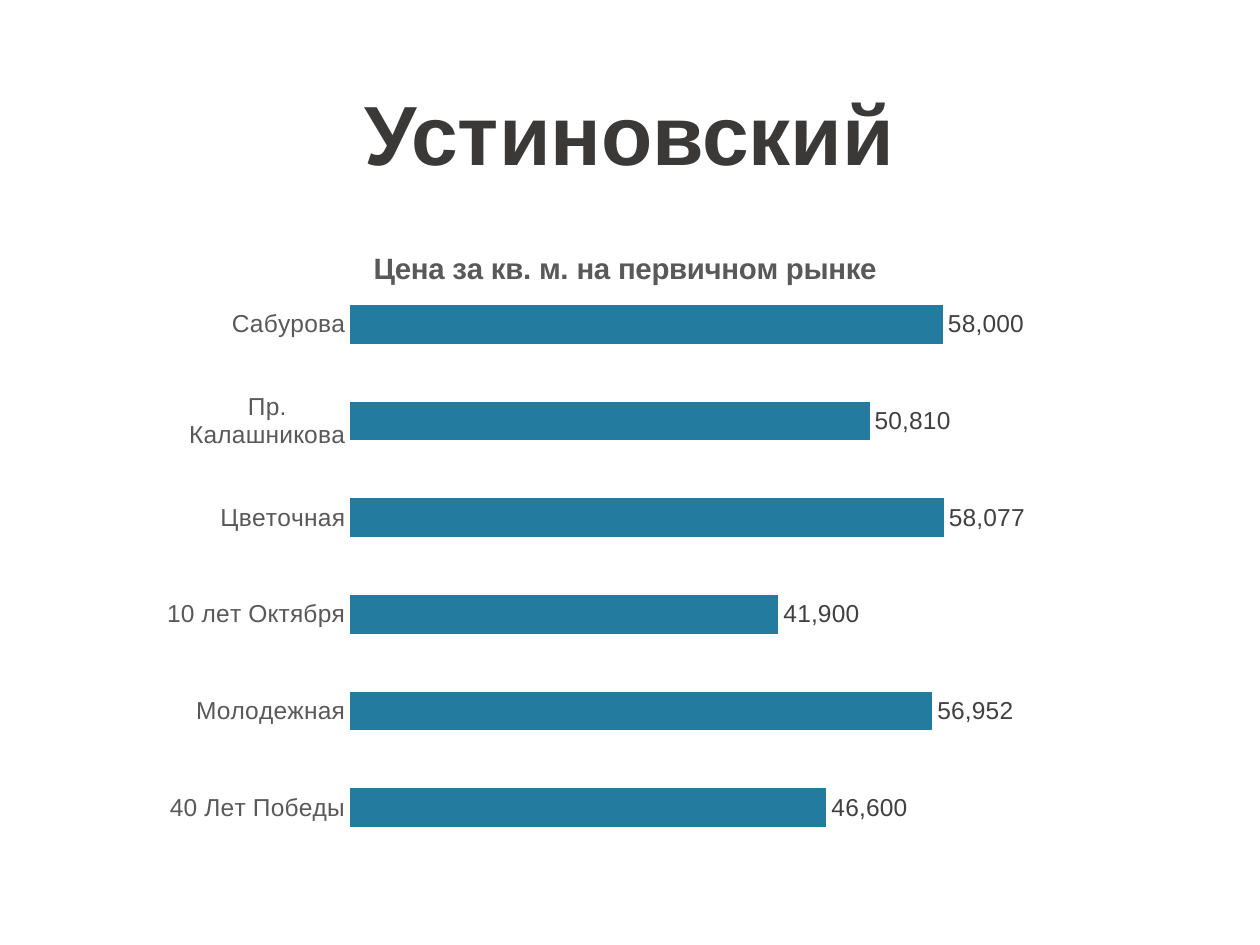
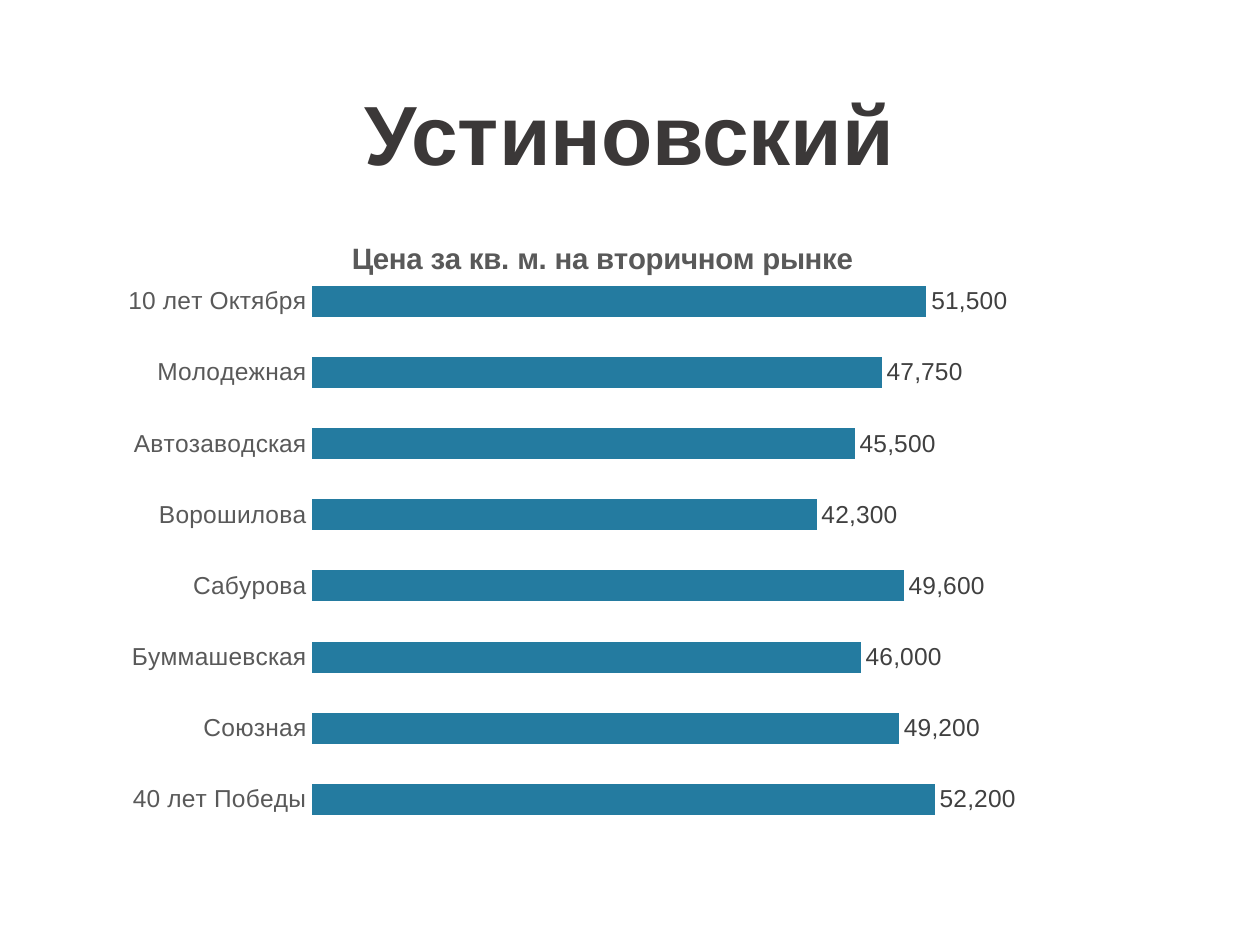
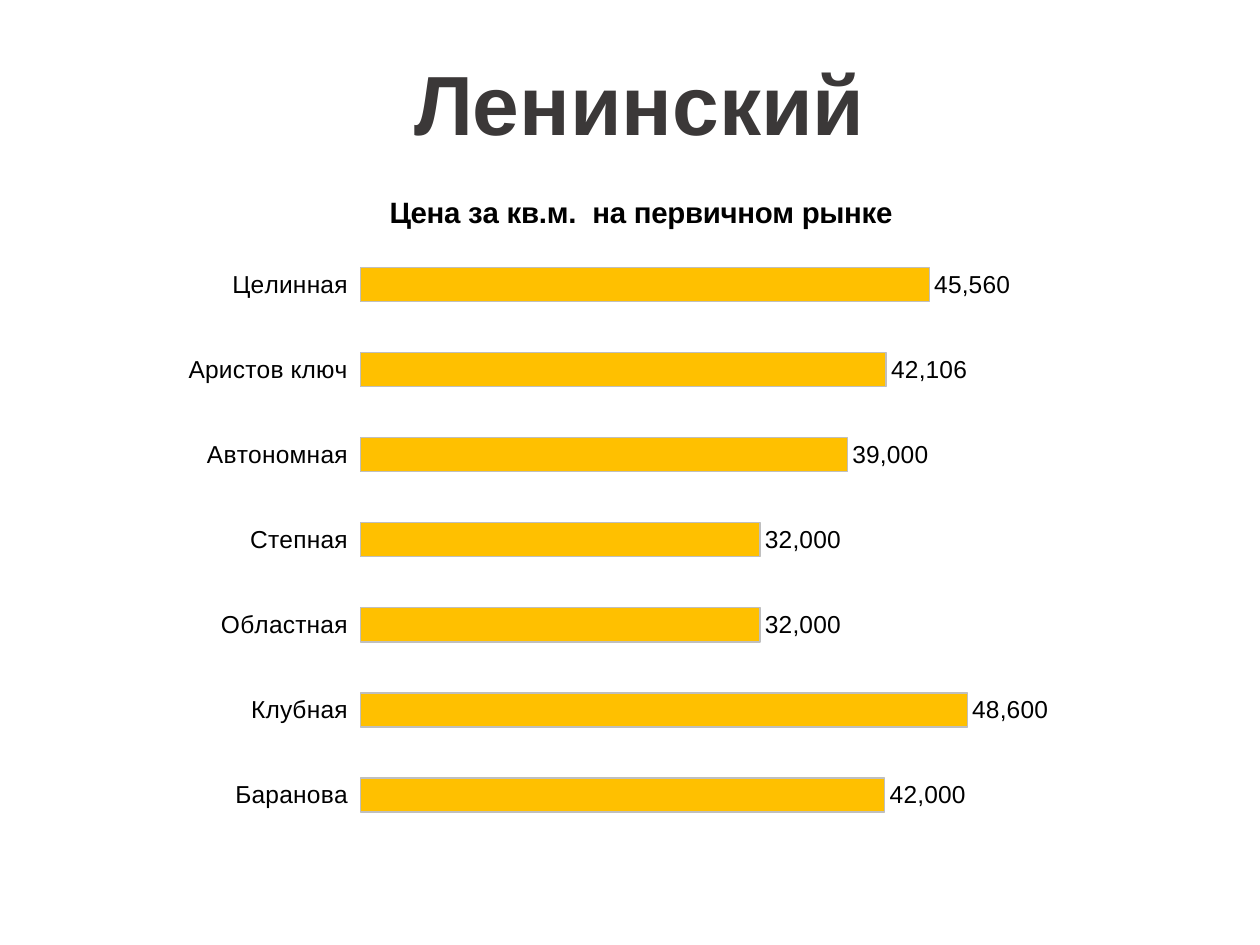
from lxml import etree
from pptx import Presentation
from pptx.chart.data import CategoryChartData
from pptx.dml.color import RGBColor
from pptx.enum import chart as kinds, text
from pptx.oxml import ns
from pptx.util import Inches, Pt

FONT = "Arial"
HEADING = RGBColor(0x3B, 0x38, 0x38)
BLACK = RGBColor(0, 0, 0)
GREY = RGBColor(0x59, 0x59, 0x59)
DARK_GREY = RGBColor(0x40, 0x40, 0x40)
SILVER = RGBColor(0xBF, 0xBF, 0xBF)
BLUE = RGBColor(0x24, 0x7B, 0xA0)
AMBER = RGBColor(0xFF, 0xC0, 0x00)


def set_font(font, size, color, bold=False):
    font.name = FONT
    font.size = Pt(size)
    font.bold = bold
    font.color.rgb = color


def set_layout(parent, index, **settings):
    for old in parent.findall(ns.qn("c:layout")):
        parent.remove(old)
    layout = etree.Element(ns.qn("c:layout"))
    manual = etree.SubElement(layout, ns.qn("c:manualLayout"))
    for name, value in settings.items():
        etree.SubElement(manual, ns.qn("c:" + name)).set("val", str(value))
    parent.insert(index, layout)


pages = [
    dict(
        district="Устиновский", heading_at=(0.98, 0.6),
        title="Цена за кв. м. на первичном рынке", title_at=(0.217, 0.015),
        series="Series 1", frame=(1.3, 1.86, 7.48, 5.33), plot=(0.198, 0.062, 0.759, 0.864),
        gap=150, overlap=0, maximum=70000, fill=BLUE, outline=None,
        text_color=GREY, label_color=DARK_GREY, tick=kinds.XL_TICK_MARK.NONE,
        prices={"40 Лет Победы": 46600, "Молодежная": 56952, "10 лет Октября": 41900,
                "Цветочная": 58077, "Пр. Калашникова": 50810, "Сабурова": 58000},
    ),
    dict(
        district="Устиновский", heading_at=(0.98, 0.6),
        title="Цена за кв. м. на вторичном рынке", title_at=(0.235, 0.015),
        series="Series 1", frame=(0.99, 1.78, 7.49, 5.23), plot=(0.198, 0.063, 0.759, 0.864),
        gap=130, overlap=73, maximum=60000, fill=BLUE, outline=None,
        text_color=GREY, label_color=DARK_GREY, tick=kinds.XL_TICK_MARK.NONE,
        prices={"40 лет Победы": 52200, "Союзная": 49200, "Буммашевская": 46000,
                "Сабурова": 49600, "Ворошилова": 42300, "Автозаводская": 45500,
                "Молодежная": 47750, "10 лет Октября": 51500},
    ),
    dict(
        district="Ленинский", heading_at=(1.06, 0.36),
        title="Цена за кв.м.  на первичном рынке", title_at=(0.268, 0.04),
        series="Цена за кв.м.  на первичном рынке",
        frame=(0.75, 1.27, 8.58, 5.71), plot=(0.246, 0.114, 0.693, 0.828),
        gap=150, overlap=0, maximum=60000, fill=AMBER, outline=SILVER,
        text_color=BLACK, label_color=BLACK, tick=kinds.XL_TICK_MARK.OUTSIDE,
        prices={"Баранова": 42000, "Клубная": 48600, "Областная": 32000, "Степная": 32000,
                "Автономная": 39000, "Аристов ключ": 42106, "Целинная": 45560},
    ),
]

deck = Presentation()
deck.slide_width = Inches(10)
deck.slide_height = Inches(7.5)

for page in pages:
    slide = deck.slides.add_slide(deck.slide_layouts[5])
    heading = slide.shapes.title
    heading.left, heading.top = [Inches(value) for value in page["heading_at"]]
    heading.width, heading.height = Inches(8.03), Inches(0.91)
    frame = heading.text_frame
    frame.text = page["district"]
    frame.word_wrap = True
    frame.auto_size = text.MSO_AUTO_SIZE.SHAPE_TO_FIT_TEXT
    frame.vertical_anchor = text.MSO_ANCHOR.TOP
    para = frame.paragraphs[0]
    para.alignment = text.PP_ALIGN.CENTER
    set_font(para.font, 48, HEADING, True)

    data = CategoryChartData(number_format="#,##0")
    data.categories = list(page["prices"])
    data.add_series(page["series"], list(page["prices"].values()))
    chart = slide.shapes.add_chart(
        kinds.XL_CHART_TYPE.BAR_CLUSTERED, *[Inches(value) for value in page["frame"]], data
    ).chart
    chart.has_legend = False
    set_font(chart.font, 14, BLACK)

    chart.has_title = True
    title = chart.chart_title
    title.text_frame.text = page["title"]
    set_font(title.text_frame.paragraphs[0].font, 16.8, page["text_color"], True)
    title.include_in_layout = False
    x, y = page["title_at"]
    set_layout(title._element, 1, xMode="edge", yMode="edge", x=x, y=y)

    x, y, width, height = page["plot"]
    set_layout(chart._chartSpace.chart.plotArea, 0, layoutTarget="inner",
               xMode="edge", yMode="edge", x=x, y=y, w=width, h=height)

    streets = chart.category_axis
    streets.major_tick_mark = page["tick"]
    streets.minor_tick_mark = kinds.XL_TICK_MARK.NONE
    streets.has_major_gridlines = False
    streets.format.line.fill.background()
    set_font(streets.tick_labels.font, 14, page["text_color"])

    scale = chart.value_axis
    scale.minimum_scale = 0
    scale.maximum_scale = page["maximum"]
    scale.has_major_gridlines = False
    scale.visible = False

    plot = chart.plots[0]
    plot.gap_width = page["gap"]
    plot.overlap = page["overlap"]
    plot.vary_by_categories = False
    bars = plot.series[0]
    bars.format.fill.solid()
    bars.format.fill.fore_color.rgb = page["fill"]
    if page["outline"] is None:
        bars.format.line.fill.background()
    else:
        bars.format.line.color.rgb = page["outline"]
        bars.format.line.width = Pt(0.75)

    labels = bars.data_labels
    labels.show_value = True
    labels.number_format = "#,##0"
    labels.number_format_is_linked = False
    labels.position = kinds.XL_LABEL_POSITION.OUTSIDE_END
    set_font(labels.font, 14, page["label_color"])

deck.save("out.pptx")
